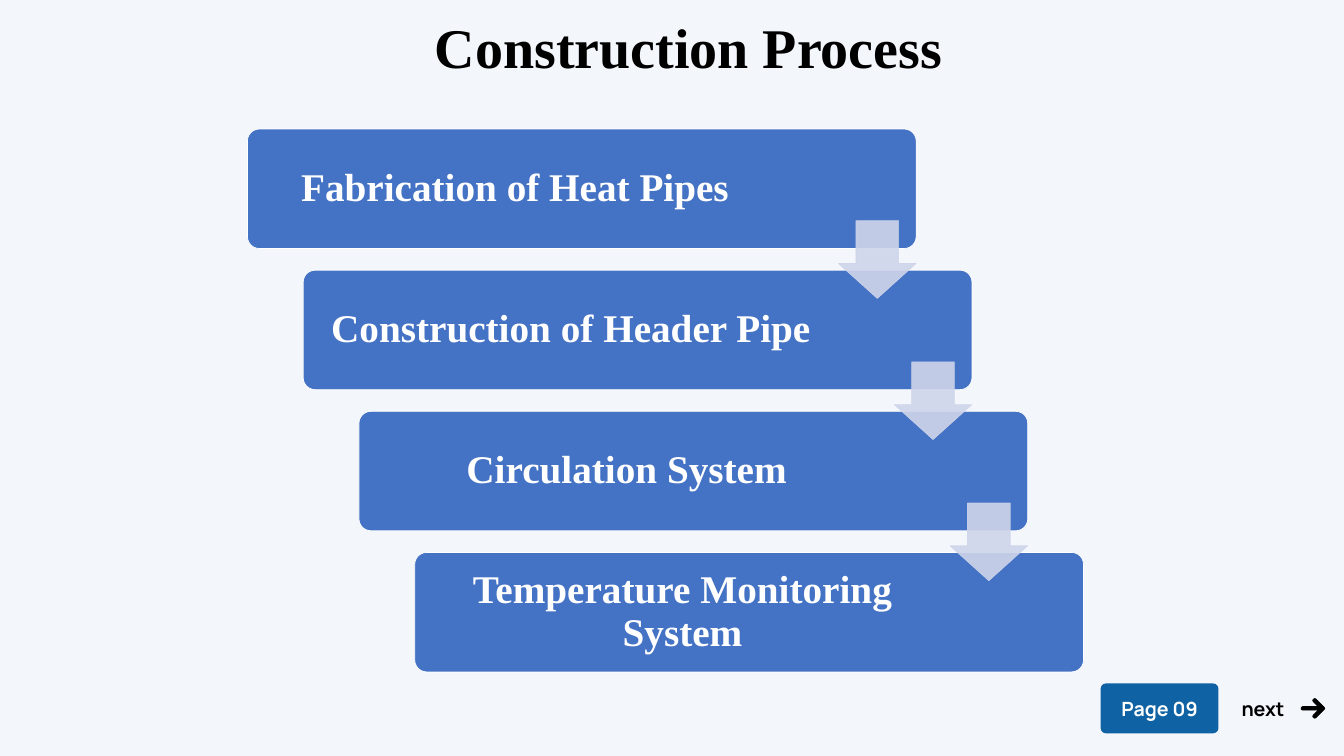
from typing import NamedTuple

from lxml.etree import SubElement
from pptx import Presentation
from pptx.dml.color import RGBColor
from pptx.enum.shapes import MSO_SHAPE as Shape
from pptx.enum.text import MSO_ANCHOR as Anchor, MSO_AUTO_SIZE as AutoSize, PP_ALIGN as Align
from pptx.oxml.ns import qn
from pptx.util import Inches, Pt

BACKGROUND = RGBColor(0xF3, 0xF6, 0xFB)
BUTTON_BLUE = RGBColor(0x0F, 0x62, 0xA3)
STEP_BLUE = RGBColor(0x44, 0x72, 0xC4)
ARROW_GREY = RGBColor(0xCF, 0xD5, 0xEA)
WHITE = RGBColor(0xFF, 0xFF, 0xFF)
BLACK = RGBColor(0, 0, 0)

WIDTH, HEIGHT = Inches(26.67), Inches(15)
SERIF, SANS = "Times New Roman", "Manrope"


class Box(NamedTuple):
    """Left, top, width and height in percent of the slide."""
    x: float
    y: float
    w: float
    h: float

    def shifted(self, dx: float, dy: float) -> "Box":
        return self._replace(x=self.x + dx, y=self.y + dy)

    def emu(self) -> tuple[int, int, int, int]:
        return across(self.x), down(self.y), across(self.w), down(self.h)


class Style(NamedTuple):
    font: str
    size: int
    color: RGBColor
    align: Align = Align.CENTER


TITLE_STYLE = Style(SERIF, 80, BLACK)
STEP_STYLE = Style(SERIF, 56, WHITE)
BUTTON_STYLE = Style(SANS, 28, WHITE)
NEXT_STYLE = Style(SANS, 28, BLACK, Align.LEFT)

STEPS = (
    "Fabrication of Heat Pipes",
    "Construction of Header Pipe",
    "Circulation System",
    "Temperature Monitoring System",
)
STEP_DX, STEP_DY = 4.15, 18.67
STEP_BOX = Box(18.41, 17.07, 49.76, 15.8)
STEP_TEXT = Box(18.67, 17.53, 39.33, 14.87)
STEP_ARROW = Box(62.39, 29.2, 5.77, 10.27)

NEXT_ARROW = Box(96.81, 92.4, 1.76, 2.6)
# Upper half of the arrow outline, tail to tip, in shares of its box
ARROW_HALF = (
    (0, 0.46), (0.06, 0.41), (0.72, 0.41), (0.51, 0.15),
    (0.49, 0.1), (0.51, 0.05), (0.55, 0.01), (0.58, 0),
    (0.62, 0.02), (0.98, 0.45), (1, 0.5),
)


def across(percent: float) -> int:
    return round(WIDTH * percent / 100)


def down(percent: float) -> int:
    return round(HEIGHT * percent / 100)


def paint(sp, fill: RGBColor, line: RGBColor | None = None, alpha: int = 100) -> None:
    """Set flat fill and 1 pt line; alpha is the opacity in percent."""
    sp.shadow.inherit = False
    sp.fill.solid()
    sp.fill.fore_color.rgb = fill
    if line is None:
        sp.line.fill.background()
    else:
        sp.line.color.rgb = line
        sp.line.width = Pt(1)
    if alpha < 100:
        for color in sp._element.spPr.iter(qn("a:srgbClr")):
            SubElement(color, qn("a:alpha"), val=str(alpha * 1000))


def add_text(slide, box: Box, text: str, style: Style):
    tf = slide.shapes.add_textbox(*box.emu()).text_frame
    tf.word_wrap = True
    tf.auto_size = AutoSize.SHAPE_TO_FIT_TEXT
    tf.text = text
    p = tf.paragraphs[0]
    p.alignment = style.align
    font = p.runs[0].font
    font.name, font.size, font.bold = style.font, Pt(style.size), True
    font.color.rgb = style.color
    return tf


def add_steps(slide) -> None:
    for i, text in enumerate(STEPS):
        shift = i * STEP_DX, i * STEP_DY
        sp = slide.shapes.add_shape(Shape.ROUNDED_RECTANGLE, *STEP_BOX.shifted(*shift).emu())
        sp.adjustments[0] = 0.1
        paint(sp, STEP_BLUE, WHITE)
        tf = add_text(slide, STEP_TEXT.shifted(*shift), text, STEP_STYLE)
        tf.auto_size = AutoSize.NONE
        tf.vertical_anchor = Anchor.MIDDLE
        tf.margin_left = tf.margin_right = across(0.86)
        tf.margin_top = tf.margin_bottom = down(1.53)
        tf.paragraphs[0].line_spacing = 0.9

    for i in range(len(STEPS) - 1):
        box = STEP_ARROW.shifted(i * STEP_DX, i * STEP_DY)
        sp = slide.shapes.add_shape(Shape.DOWN_ARROW, *box.emu())
        sp.adjustments[0], sp.adjustments[1] = 0.55, 0.45
        paint(sp, ARROW_GREY, ARROW_GREY, alpha=90)


def add_next_arrow(slide) -> None:
    x, y, w, h = NEXT_ARROW.emu()
    mirrored = [(px, 1 - py) for px, py in reversed(ARROW_HALF[:-1])]
    points = [(x + w * px, y + h * py) for px, py in (*ARROW_HALF, *mirrored)]
    builder = slide.shapes.build_freeform(*points[0])
    builder.add_line_segments(points[1:], close=True)
    paint(builder.convert_to_shape(), BLACK, BLACK)


def add_navigation(slide) -> None:
    button = slide.shapes.add_shape(Shape.ROUNDED_RECTANGLE, *Box(81.89, 90.4, 8.77, 6.6).emu())
    button.adjustments[0] = 0.107
    paint(button, BUTTON_BLUE)
    add_text(slide, Box(81.89, 91.8, 8.77, 3.8), "Page 09", BUTTON_STYLE)
    add_text(slide, Box(92.01, 91.8, 6.45, 3.8), "next", NEXT_STYLE)
    add_next_arrow(slide)


def main() -> None:
    prs = Presentation()
    prs.slide_width, prs.slide_height = WIDTH, HEIGHT
    s = prs.slides.add_slide(prs.slide_layouts[6])
    s.background.fill.solid()
    s.background.fill.fore_color.rgb = BACKGROUND
    add_navigation(s)
    add_text(s, Box(31.38, 1.27, 39.75, 9.67), "Construction Process", TITLE_STYLE)
    add_steps(s)
    prs.save("out.pptx")


if __name__ == "__main__":
    main()
